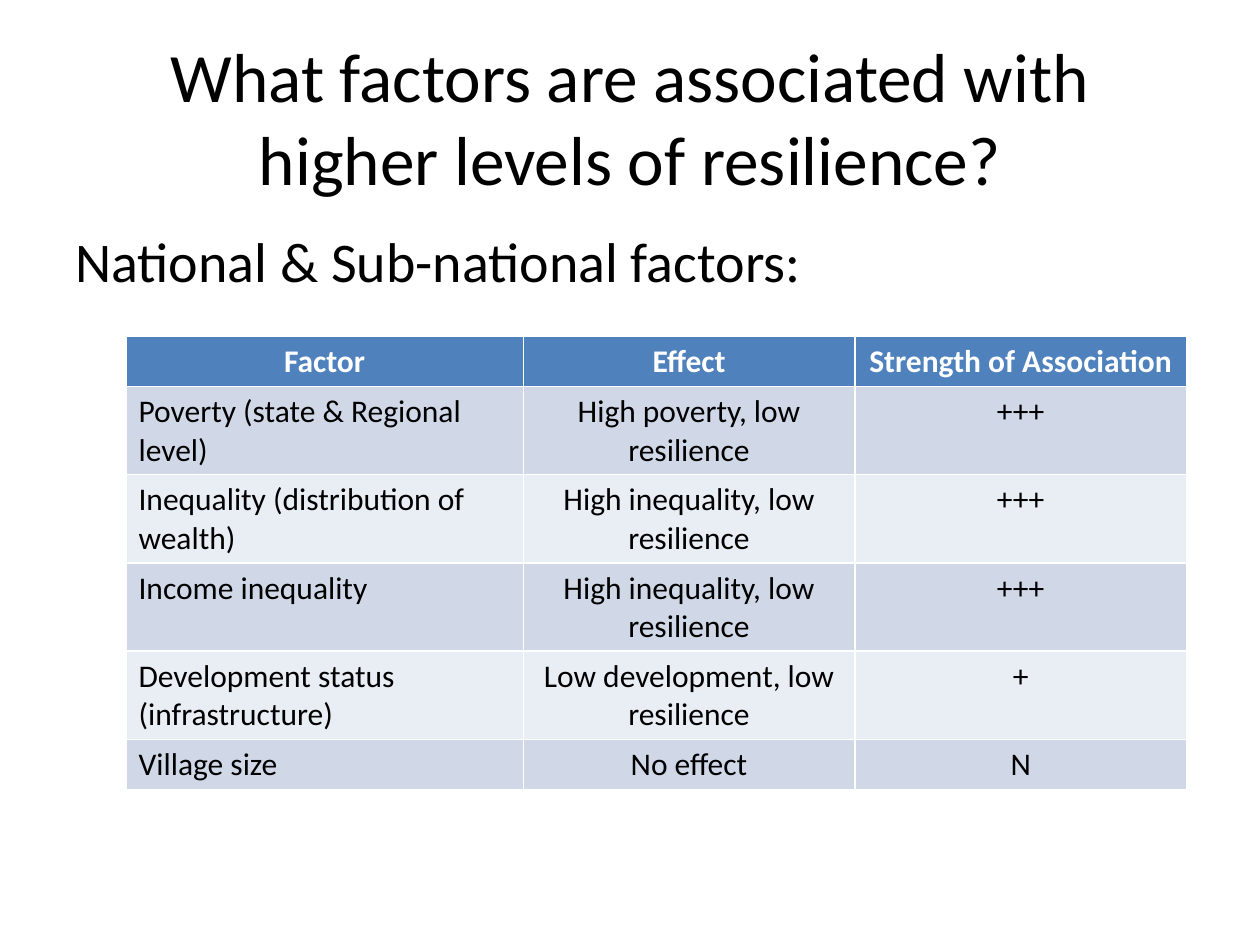
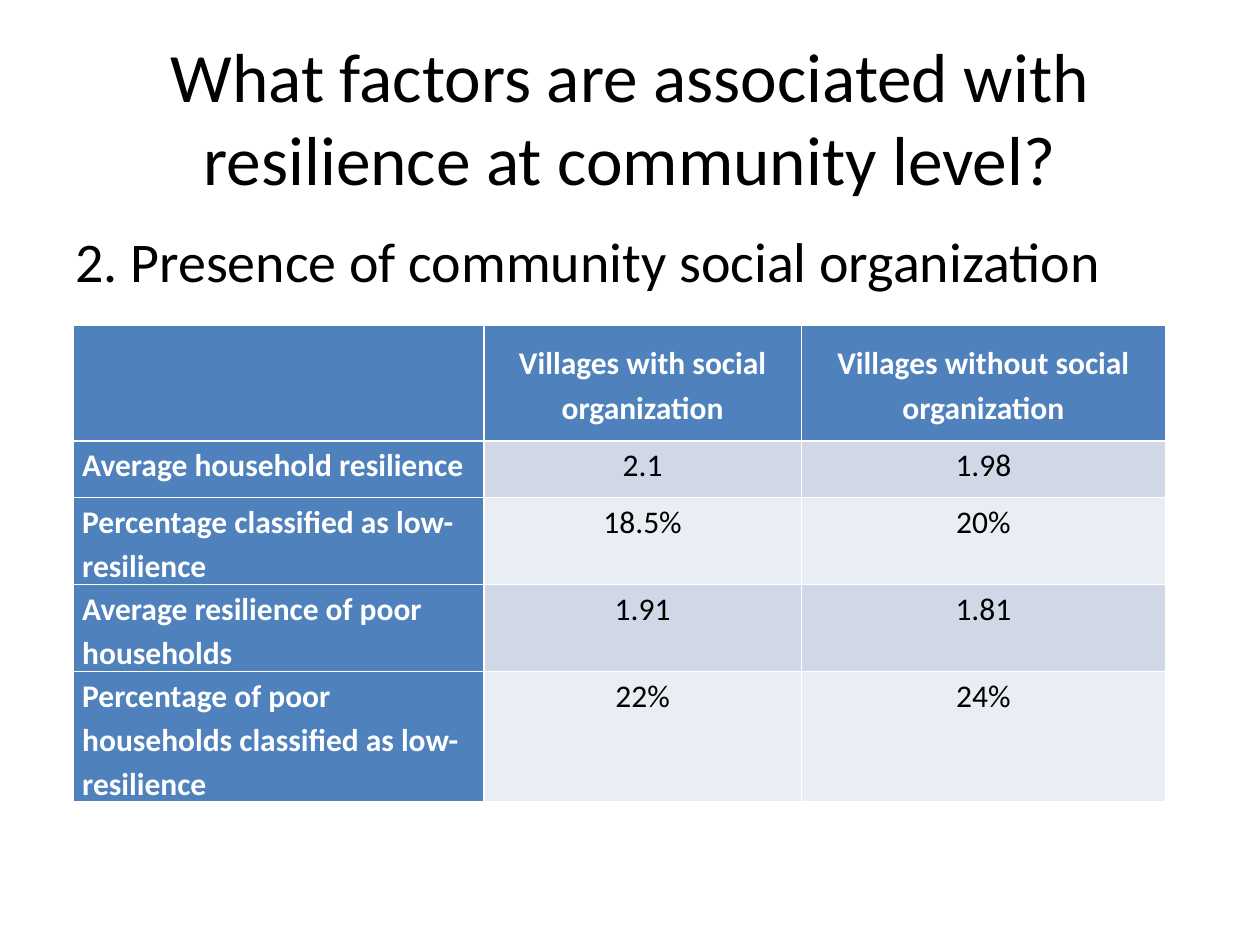
from dataclasses import dataclass

from pptx import Presentation
from pptx import util as u
from pptx.dml import color
from pptx.enum import text


@dataclass(frozen=True)
class Theme:
    font: str = "Calibri"
    title_size: float = 39.6
    subtitle_size: float = 32
    table_size: float = 18
    dark: str = "000000"
    light: str = "FFFFFF"
    heading_fill: str = "4F81BD"
    band_fills: tuple = ("D0D8E8", "E9EDF4")


@dataclass(frozen=True)
class CellLayout:
    side_margin: float = 7.2
    edge_margin: float = 3.6
    line_spacing: float = 1.0
    header_anchor: text.MSO_ANCHOR = text.MSO_ANCHOR.TOP


LEFT, CENTER = text.PP_ALIGN.LEFT, text.PP_ALIGN.CENTER


class Deck:
    TITLE_ONLY = 5

    def __init__(self, theme):
        self.theme = theme
        self.presentation = Presentation()
        self.presentation.slide_width = u.Pt(720)
        self.presentation.slide_height = u.Pt(540)
        self.slide = None

    def set_text(self, frame, words, size, ink, align=LEFT, bold=False):
        frame.text = words
        paragraph = frame.paragraphs[0]
        paragraph.alignment = align
        for run in paragraph.runs:
            run.font.name = self.theme.font
            run.font.size = u.Pt(size)
            run.font.bold = bold
            run.font.color.rgb = color.RGBColor.from_string(ink)
        return paragraph

    def add_slide(self, title, subtitle):
        layout = self.presentation.slide_layouts[self.TITLE_ONLY]
        self.slide = self.presentation.slides.add_slide(layout)
        self.format_title(title)
        self.add_subtitle(subtitle)

    def format_title(self, words):
        shape = self.slide.shapes.title
        shape.left, shape.top = u.Pt(36), u.Pt(21.6)
        shape.width, shape.height = u.Pt(648), u.Pt(90)
        frame = shape.text_frame
        frame.auto_size = text.MSO_AUTO_SIZE.NONE
        frame.vertical_anchor = text.MSO_ANCHOR.MIDDLE
        self.set_text(frame, words, self.theme.title_size, self.theme.dark, CENTER)

    def add_subtitle(self, words):
        shape = self.slide.shapes.add_textbox(u.Pt(36), u.Pt(126), u.Pt(648), u.Pt(356.4))
        shape.text_frame.word_wrap = True
        self.set_text(shape.text_frame, words, self.theme.subtitle_size, self.theme.dark)

    def add_table(self, left, top, widths, heights, rows, layout, heading_column=False):
        """Add a banded table; the table style draws the white cell borders."""
        shape = self.slide.shapes.add_table(
            len(rows), len(widths), u.Pt(left), u.Pt(top),
            u.Pt(sum(widths)), u.Pt(sum(heights)))
        table = shape.table
        table.first_col = heading_column
        for column, width in zip(table.columns, widths):
            column.width = u.Pt(width)
        for row, height in zip(table.rows, heights):
            row.height = u.Pt(height)
        for r, row in enumerate(rows):
            for c, words in enumerate(row):
                heading = r == 0 or (heading_column and c == 0)
                align = LEFT if r > 0 and c == 0 else CENTER
                fill = self.theme.heading_fill if heading else self.theme.band_fills[(r - 1) % 2]
                cell = table.cell(r, c)
                self.format_cell(cell, words, fill, heading, align, layout)
                if r == 0:
                    cell.vertical_anchor = layout.header_anchor

    def format_cell(self, cell, words, fill, heading, align, layout):
        cell.fill.solid()
        cell.fill.fore_color.rgb = color.RGBColor.from_string(fill)
        cell.margin_left = cell.margin_right = u.Pt(layout.side_margin)
        cell.margin_top = cell.margin_bottom = u.Pt(layout.edge_margin)
        ink = self.theme.light if heading else self.theme.dark
        paragraph = self.set_text(cell.text_frame, words, self.theme.table_size, ink, align, heading)
        paragraph.line_spacing = layout.line_spacing


NATIONAL_FACTORS = [
    ("Factor", "Effect", "Strength of Association"),
    ("Poverty (state & Regional level)", "High poverty, low resilience", "+++"),
    ("Inequality (distribution of wealth)", "High inequality, low resilience", "+++"),
    ("Income inequality", "High inequality, low resilience", "+++"),
    ("Development status (infrastructure)", "Low development, low resilience", "+"),
    ("Village size", "No effect", "N"),
]

SOCIAL_ORGANIZATION = [
    ("", "Villages with social organization", "Villages without social organization"),
    ("Average household resilience", "2.1", "1.98"),
    ("Percentage classified as low-resilience", "18.5%", "20%"),
    ("Average resilience of poor households", "1.91", "1.81"),
    ("Percentage of poor households classified as low-resilience", "22%", "24%"),
]


def main():
    deck = Deck(Theme())

    deck.add_slide("What factors are associated with higher levels of resilience?",
                   "National & Sub-national factors:")
    deck.add_table(72, 192, [227, 189.5, 189.5], [24] + [29] * 5,
                   NATIONAL_FACTORS, CellLayout())

    deck.add_slide("What factors are associated with resilience at community level?",
                   "2. Presence of community social organization")
    deck.add_table(42, 186, [234.5, 181.5, 208], [66, 32.4, 32.4, 32.4, 66],
                   SOCIAL_ORGANIZATION,
                   CellLayout(5, 0, 1.15, text.MSO_ANCHOR.MIDDLE), heading_column=True)

    deck.presentation.save("out.pptx")


if __name__ == "__main__":
    main()
